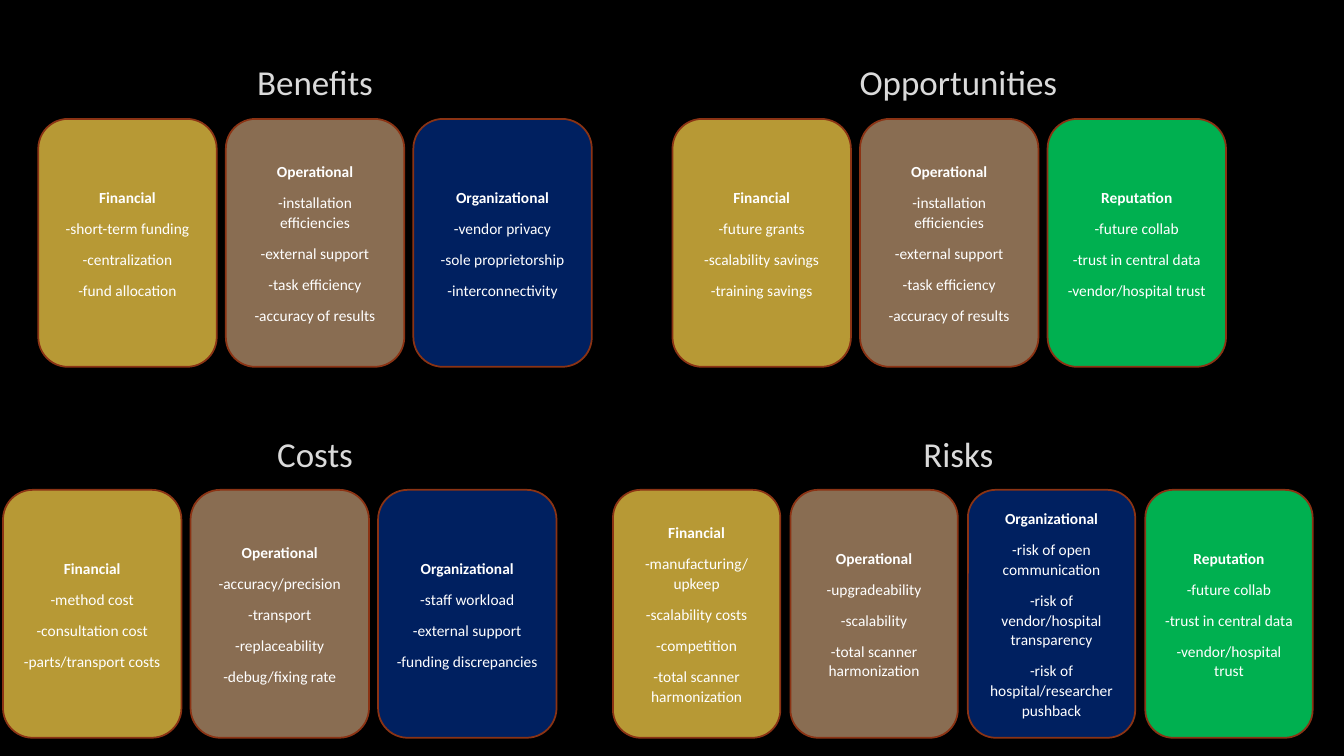
"""Build a slide of benefits, opportunities, costs and risks as four card groups."""
from lxml import etree
from pptx import Presentation
from pptx.dml.color import RGBColor
from pptx.enum.shapes import MSO_SHAPE
from pptx.enum.text import MSO_ANCHOR, MSO_AUTO_SIZE, PP_ALIGN
from pptx.oxml.ns import qn
from pptx.util import Inches, Pt

ROUNDED = MSO_SHAPE.ROUNDED_RECTANGLE
MIDDLE = MSO_ANCHOR.MIDDLE
NO_AUTOFIT = MSO_AUTO_SIZE.NONE
CENTER = PP_ALIGN.CENTER

BLACK = RGBColor(0x00, 0x00, 0x00)
WHITE = RGBColor(0xFF, 0xFF, 0xFF)
LIGHT_GREY = RGBColor(0xDA, 0xDA, 0xDA)
DARK_GREY = RGBColor(0x40, 0x40, 0x40)
RUST = RGBColor(0x8B, 0x33, 0x14)
CARD_FILLS = {
    "Financial": RGBColor(0xB7, 0x99, 0x35),
    "Operational": RGBColor(0x89, 0x6D, 0x52),
    "Organizational": RGBColor(0x00, 0x20, 0x60),
    "Reputation": RGBColor(0x00, 0xB0, 0x50),
}

HEADING_LEFTS = (1.79, 8.17)
HEADING_TOPS = (0.33, 4.02)
HEADING_SIZE = (2.67, 0.95)
CARD_TOPS = (1.18, 4.86)
CARD_HEIGHT = 2.46

EFFICIENCY = ["-installation efficiencies", "-external support",
              "-task efficiency", "-accuracy of results"]
TRUST = ["-future collab", "-trust in central data", "-vendor/hospital trust"]

GROUPS = [
    ("Benefits", 0, 0, 0.38, 1.77, 1.86, {
        "Financial": ["-short-term funding", "-centralization", "-fund allocation"],
        "Operational": EFFICIENCY,
        "Organizational": ["-vendor privacy", "-sole proprietorship",
                           "-interconnectivity"],
    }),
    ("Opportunities", 0, 1, 6.67, 1.77, 1.86, {
        "Financial": ["-future grants", "-scalability savings", "-training savings"],
        "Operational": EFFICIENCY,
        "Reputation": TRUST,
    }),
    ("Costs", 1, 0, 0.03, 1.77, 1.86, {
        "Financial": ["-method cost", "-consultation cost", "-parts/transport costs"],
        "Operational": ["-accuracy/precision", "-transport", "-replaceability",
                        "-debug/fixing rate"],
        "Organizational": ["-staff workload", "-external support",
                           "-funding discrepancies"],
    }),
    ("Risks", 1, 1, 6.08, 1.66, 1.76, {
        "Financial": ["-manufacturing/ upkeep", "-scalability costs", "-competition",
                      "-total scanner harmonization"],
        "Operational": ["-upgradeability", "-scalability",
                        "-total scanner harmonization"],
        "Organizational": ["-risk of open communication",
                           "-risk of vendor/hospital transparency",
                           "-risk of hospital/researcher pushback"],
        "Reputation": TRUST,
    }),
]


def write_line(para, text, size, color, bold=False):
    """Add one centred run to a paragraph and return it."""
    para.alignment = CENTER
    span = para.add_run()
    span.text = text
    for name, value in {"name": "Calibri", "size": Pt(size), "bold": bold}.items():
        setattr(span.font, name, value)
    span.font.color.rgb = color
    return span


def outline_text(span):
    """Give a run a thin, almost transparent outline."""
    line = etree.Element(qn("a:ln"), w=str(Pt(0.75)))
    fill = etree.SubElement(line, qn("a:solidFill"))
    color = etree.SubElement(fill, qn("a:srgbClr"), val=str(DARK_GREY))
    etree.SubElement(color, qn("a:alpha"), val="10000")
    span.font._element.insert(0, line)


deck = Presentation()
deck.slide_width, deck.slide_height = Inches(13.33), Inches(7.5)
page = deck.slides.add_slide(deck.slide_layouts[5])
page.background.fill.solid()
page.background.fill.fore_color.rgb = BLACK

for heading, row, column, first_left, card_width, pitch, cards in GROUPS:
    place = [Inches(length) for length in
             (HEADING_LEFTS[column], HEADING_TOPS[row], *HEADING_SIZE)]
    if heading == "Benefits":
        box = page.shapes.title
        for name, value in zip(("left", "top", "width", "height"), place):
            setattr(box, name, value)
    else:
        box = page.shapes.add_textbox(*place)
    frame = box.text_frame
    for name, value in {"word_wrap": True, "auto_size": NO_AUTOFIT,
                        "vertical_anchor": MIDDLE}.items():
        setattr(frame, name, value)
    outline_text(write_line(frame.paragraphs[0], heading, 25, LIGHT_GREY))

    for index, (topic, points) in enumerate(cards.items()):
        card = page.shapes.add_shape(
            ROUNDED, Inches(first_left + index * pitch), Inches(CARD_TOPS[row]),
            Inches(card_width), Inches(CARD_HEIGHT))
        card.shadow.inherit = False
        card.fill.solid()
        card.fill.fore_color.rgb = CARD_FILLS[topic]
        card.line.color.rgb = RUST
        card.line.width = Pt(1.25)
        frame = card.text_frame
        frame.word_wrap = True
        frame.vertical_anchor = MIDDLE
        for number, text in enumerate([topic, *points]):
            para = frame.add_paragraph() if number else frame.paragraphs[0]
            para.line_spacing = 1.07
            para.space_after = Pt(8)
            write_line(para, text, 11, WHITE, bold=number == 0)

deck.save("out.pptx")
